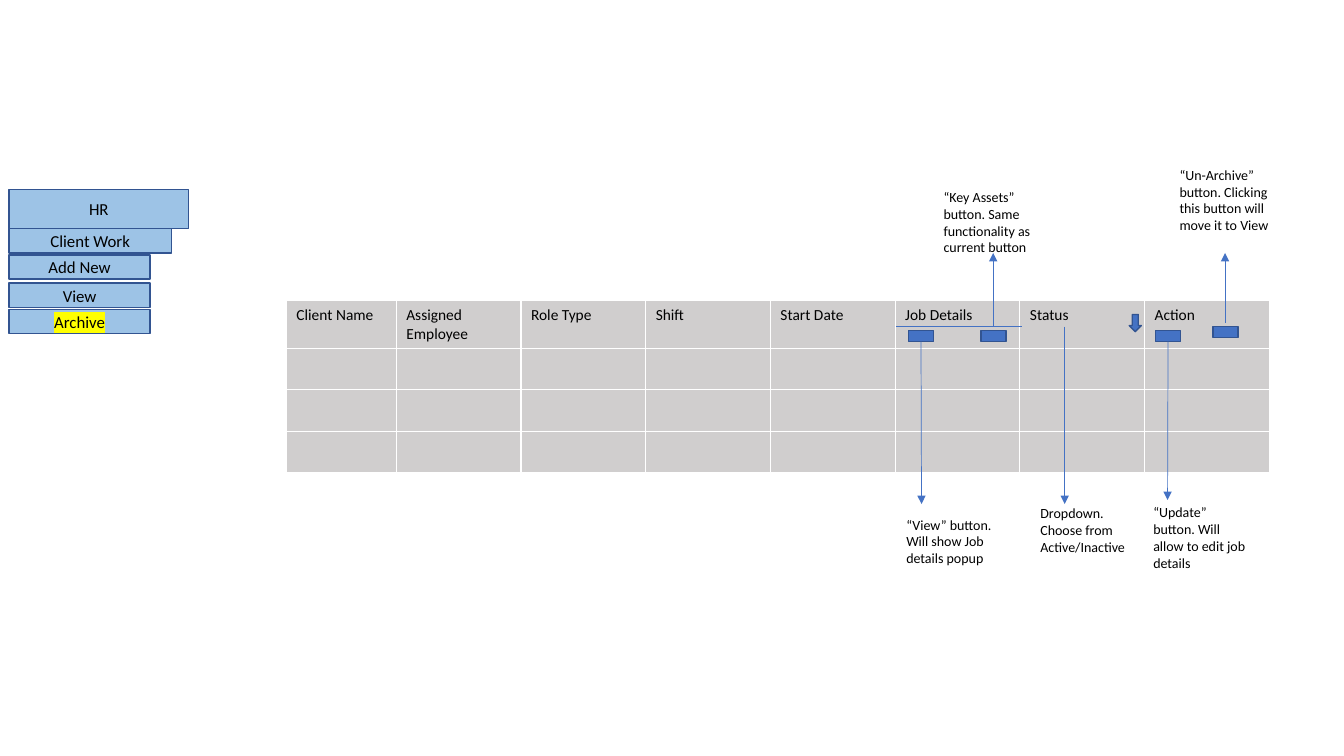
from lxml.etree import SubElement
from pptx import Presentation
from pptx.dml.color import RGBColor
from pptx.enum.shapes import MSO_CONNECTOR, MSO_SHAPE
from pptx.enum.text import MSO_ANCHOR, MSO_AUTO_SIZE, PP_ALIGN
from pptx.oxml import parse_xml
from pptx.oxml.ns import nsdecls, qn
from pptx.util import Inches, Pt

BLACK = RGBColor(0x00, 0x00, 0x00)
BLUE = RGBColor(0x44, 0x72, 0xC4)
DARK_BLUE = RGBColor(0x32, 0x54, 0x91)
LIGHT_BLUE = RGBColor(0x9D, 0xC3, 0xE6)
GREY = RGBColor(0xD0, 0xCE, 0xCE)
YELLOW = RGBColor(0xFF, 0xFF, 0x00)

BOTTOM_SIDE = 2


class Wireframe:
    """Draws the elements of a screen sketch on one slide."""

    font_name = "Calibri"

    def __init__(self, slide):
        self.shapes = slide.shapes

    def label(self, paragraph, text, size, highlight=None):
        run = paragraph.add_run()
        run.text = text
        run.font.name = self.font_name
        run.font.size = Pt(size)
        run.font.bold = False
        run.font.color.rgb = BLACK
        if highlight is not None:
            marker = parse_xml(
                f'<a:highlight {nsdecls("a")}><a:srgbClr val="{highlight}"/></a:highlight>'
            )
            run.font._element.find(qn("a:solidFill")).addnext(marker)

    def block(self, left, top, width, height, fill=BLUE, kind=MSO_SHAPE.RECTANGLE):
        block = self.shapes.add_shape(
            kind, Inches(left), Inches(top), Inches(width), Inches(height)
        )
        block.shadow.inherit = False
        block.fill.solid()
        block.fill.fore_color.rgb = fill
        block.line.color.rgb = DARK_BLUE
        block.line.width = Pt(1)
        return block

    def button(self, left, top):
        return self.block(left, top, 0.25, 0.11)

    def menu_item(self, text, top, width, height, highlight=None):
        item = self.block(0.09, top, width, height, LIGHT_BLUE)
        frame = item.text_frame
        frame.vertical_anchor = MSO_ANCHOR.MIDDLE
        frame.paragraphs[0].alignment = PP_ALIGN.CENTER
        self.label(frame.paragraphs[0], text, 12, highlight)

    def note(self, text, left, top, height):
        note = self.shapes.add_textbox(
            Inches(left), Inches(top), Inches(1.11), Inches(height)
        )
        frame = note.text_frame
        frame.word_wrap = True
        frame.auto_size = MSO_AUTO_SIZE.SHAPE_TO_FIT_TEXT
        self.label(frame.paragraphs[0], text, 10)

    def line(self, start, end, arrow=True, source=None):
        line = self.shapes.add_connector(
            MSO_CONNECTOR.STRAIGHT, *map(Inches, (*start, *end))
        )
        line.line.color.rgb = BLUE
        line.line.width = Pt(0.5)
        properties = line._element.spPr
        if arrow:
            SubElement(properties.find(qn("a:ln")), qn("a:tailEnd"), type="triangle")
        SubElement(properties, qn("a:effectLst"))
        if source is not None:
            line.begin_connect(source, BOTTOM_SIDE)

    def table(self, headers, row_count, left, top, width, first_width):
        row_height = 0.41
        table = self.shapes.add_table(
            row_count, len(headers), Inches(left), Inches(top),
            Inches(width), Inches(row_height * row_count),
        ).table
        other_width = (width - first_width) / (len(headers) - 1)
        for index, column in enumerate(table.columns):
            column.width = Inches(other_width if index else first_width)
        for cell in table.iter_cells():
            cell.fill.solid()
            cell.fill.fore_color.rgb = GREY
        for index, header in enumerate(headers):
            self.label(table.cell(0, index).text_frame.paragraphs[0], header, 11)


def main():
    presentation = Presentation()
    presentation.slide_width = Inches(13.33)
    presentation.slide_height = Inches(7.5)
    sketch = Wireframe(presentation.slides.add_slide(presentation.slide_layouts[6]))

    # Table of archived work
    headers = ["Client Name", "Assigned Employee", "Role Type", "Shift",
               "Start Date", "Job Details", "Status", "Action"]
    sketch.table(headers, 4, 2.84, 2.98, 9.75, 1.09)

    # Controls in the header row
    sketch.line((8.89, 3.24), (10.14, 3.24), arrow=False)
    view_button = sketch.button(9.01, 3.28)
    sketch.button(9.73, 3.28)  # Key Assets
    sketch.block(11.2, 3.12, 0.12, 0.17, kind=MSO_SHAPE.DOWN_ARROW)
    update_button = sketch.button(11.46, 3.28)
    sketch.button(12.03, 3.24)  # Un-Archive

    # Arrows from the controls to their notes
    sketch.line((9.14, 3.39), (9.14, 5), source=view_button)
    sketch.line((9.85, 3.24), (9.85, 2.51))
    sketch.line((10.56, 3.24), (10.56, 5))
    sketch.line((11.58, 3.39), (11.58, 4.96), source=update_button)
    sketch.line((12.15, 3.2), (12.15, 2.51))

    # Notes
    for text, left, top, height in [
        ("“View” button. Will show Job details popup", 8.89, 5.07, 0.61),
        ("“Key Assets” button. Same functionality as current button", 9.26, 1.82, 0.77),
        ("Dropdown. Choose from Active/Inactive", 10.22, 4.96, 0.61),
        ("“Update” button. Will allow to edit job details", 11.34, 4.95, 0.77),
        ("“Un-Archive” button. Clicking this button will move it to View", 11.6, 1.6, 0.77),
    ]:
        sketch.note(text, left, top, height)

    # Side menu
    for text, top, width, height, highlight in [
        ("HR", 1.88, 1.78, 0.39, None),
        ("Client Work", 2.27, 1.61, 0.24, None),
        ("Add New", 2.53, 1.4, 0.24, None),
        ("View", 2.81, 1.4, 0.24, None),
        ("Archive", 3.07, 1.4, 0.24, YELLOW),
    ]:
        sketch.menu_item(text, top, width, height, highlight)

    presentation.save("out.pptx")


if __name__ == "__main__":
    main()
